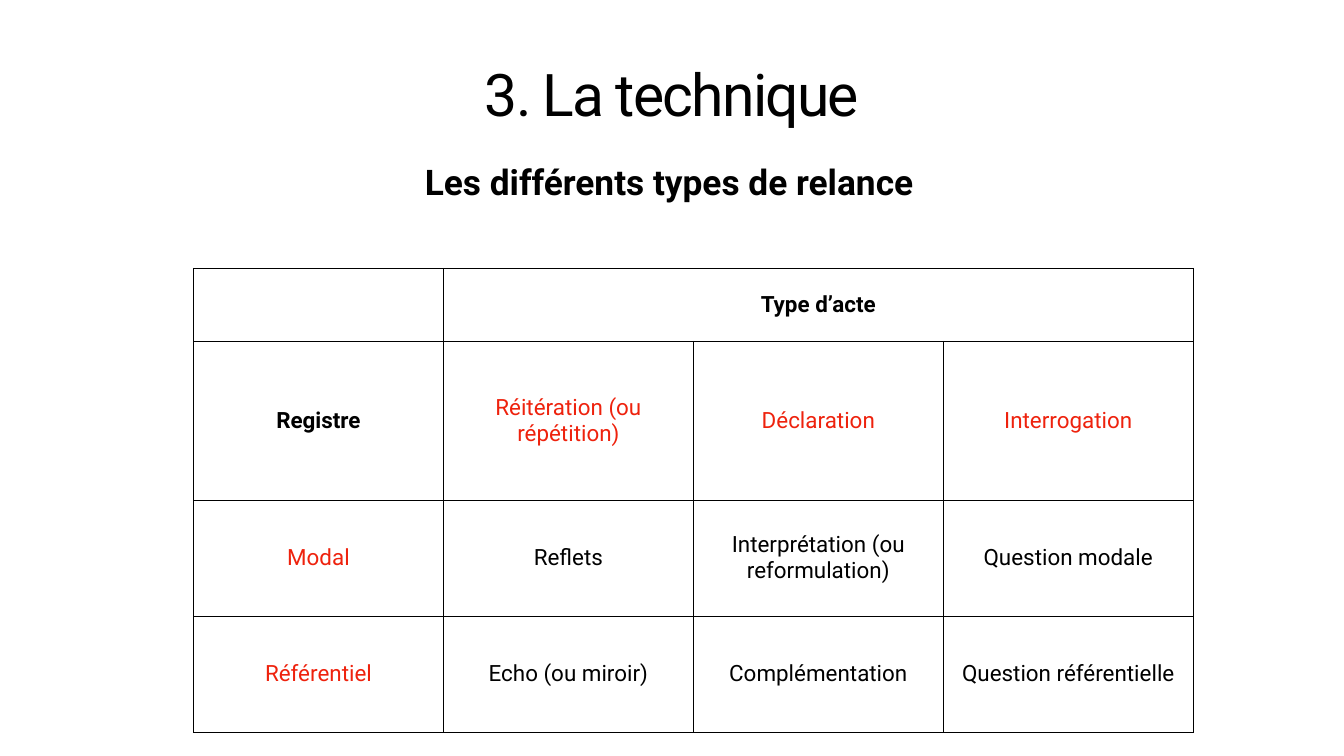
from lxml import etree
from pptx import Presentation
from pptx.dml.color import RGBColor
from pptx.enum.text import MSO_ANCHOR, PP_ALIGN
from pptx.oxml.ns import qn
from pptx.util import Inches, Pt

BLACK, RED = "000000", "EE220D"
FONT = "Roboto"
INSET = 0.06
COLUMN_WIDTH = 4.96
ROW_HEIGHTS = [1.45, 3.15, 2.3, 2.3]
ROWS = [
    ["", "Type d’acte", "", ""],
    ["Registre", "Réitération (ou répétition)", "Déclaration", "Interrogation"],
    ["Modal", "Reflets", "Interprétation (ou reformulation)", "Question modale"],
    ["Référentiel", "Echo (ou miroir)", "Complémentation", "Question référentielle"],
]
BOLD_LABELS = {"Type d’acte", "Registre"}


def color(value):
    return RGBColor.from_string(value)


def set_insets(target):
    """Give a cell or a text frame the same margin on all sides."""
    for side in ("left", "right", "top", "bottom"):
        setattr(target, f"margin_{side}", Inches(INSET))


def write_centered(frame, text, text_color=BLACK, **font_values):
    para = frame.paragraphs[0]
    para.alignment = PP_ALIGN.CENTER
    span = para.add_run()
    span.text = text
    span.font.color.rgb = color(text_color)
    for name, value in {"name": FONT, **font_values}.items():
        setattr(span.font, name, value)
    return para, span


def add_text_box(page, box, anchor):
    frame = page.shapes.add_textbox(*map(Inches, box)).text_frame
    frame.word_wrap = True
    frame.vertical_anchor = anchor
    set_insets(frame)
    return frame


def add_title(page, box):
    frame = add_text_box(page, box, MSO_ANCHOR.BOTTOM)
    para, span = write_centered(frame, "3. La technique", size=Pt(84), bold=False)
    para.line_spacing = 0.8
    span.font._element.set("spc", "-250")


def add_subtitle(page, box):
    frame = add_text_box(page, box, MSO_ANCHOR.MIDDLE)
    write_centered(frame, "Les différents types de relance", size=Pt(50.4), bold=True)


def add_borders(cell):
    properties = cell._tc.get_or_add_tcPr()
    for index, side in enumerate(("lnL", "lnR", "lnT", "lnB")):
        line = etree.Element(qn(f"a:{side}"), w=str(Pt(1)))
        fill = etree.SubElement(line, qn("a:solidFill"))
        etree.SubElement(fill, qn("a:srgbClr"), val=BLACK)
        properties.insert(index, line)


def label_color(row, column):
    """Categories, along the second row and first column, are red."""
    is_category = (row == 1) != (column == 0)
    return RED if row > 0 and is_category else BLACK


def add_relance_table(page, left, top):
    column_count = len(ROWS[0])
    size = (COLUMN_WIDTH * column_count, sum(ROW_HEIGHTS))
    table = page.shapes.add_table(
        len(ROWS), column_count, *map(Inches, (left, top, *size))
    ).table
    table.first_row = table.horz_banding = False
    for column in table.columns:
        column.width = Inches(COLUMN_WIDTH)
    for row, height in zip(table.rows, ROW_HEIGHTS):
        row.height = Inches(height)
    table.cell(0, 1).merge(table.cell(0, column_count - 1))

    for row, labels in enumerate(ROWS):
        for column, label in enumerate(labels):
            cell = table.cell(row, column)
            cell.fill.background()
            cell.vertical_anchor = MSO_ANCHOR.MIDDLE
            set_insets(cell)
            add_borders(cell)
            if label:
                write_centered(cell.text_frame, label, label_color(row, column),
                               size=Pt(32), bold=label in BOLD_LABELS)


def main():
    deck = Presentation()
    deck.slide_width, deck.slide_height = Inches(26.67), Inches(15)
    page = deck.slides.add_slide(deck.slide_layouts[6])
    add_title(page, (1.39, 0.89, 23.89, 1.7))
    add_subtitle(page, (0.7, 2.35, 25.16, 2.5))
    add_relance_table(page, 3.84, 5.32)
    deck.save("out.pptx")


if __name__ == "__main__":
    main()
